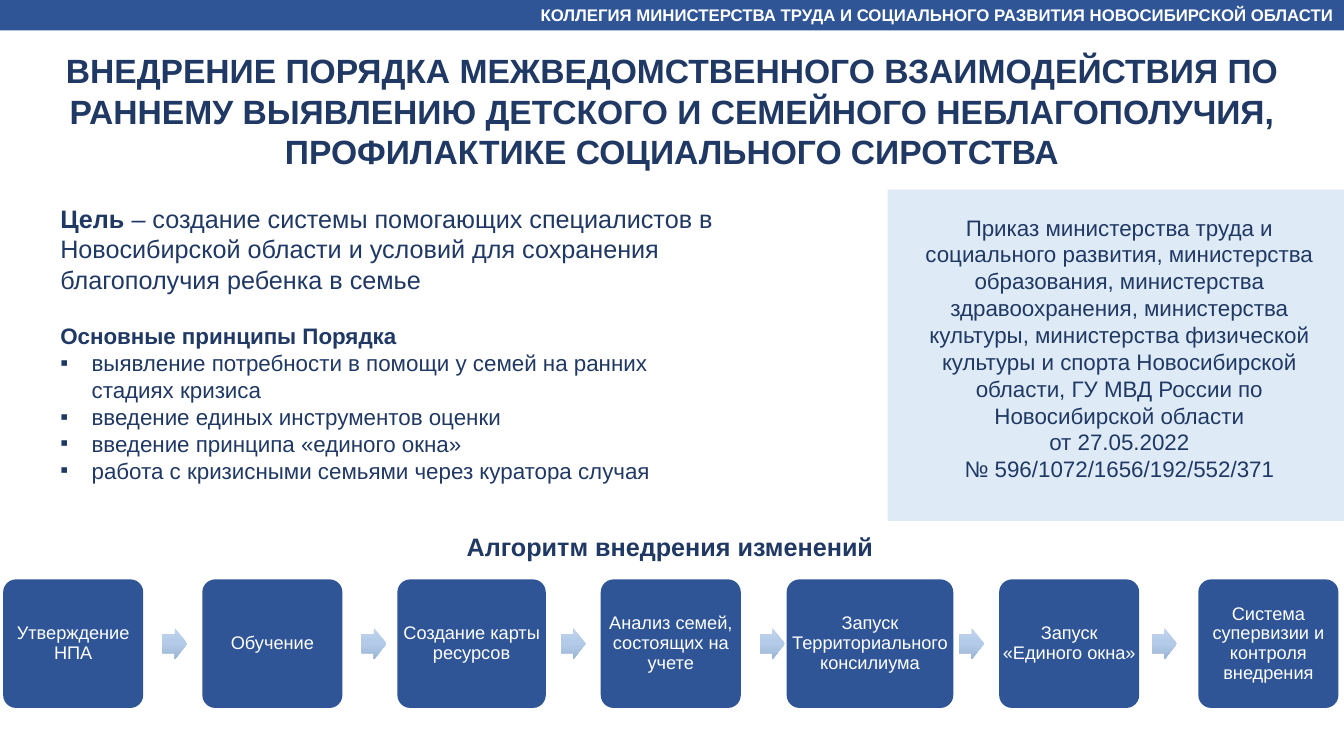
from copy import deepcopy

from lxml.etree import SubElement
from pptx import Presentation
from pptx.dml.color import RGBColor
from pptx.enum.shapes import MSO_SHAPE
from pptx.enum.text import MSO_ANCHOR, MSO_AUTO_SIZE, PP_ALIGN
from pptx.oxml.ns import qn
from pptx.util import Cm, Pt

NAVY = RGBColor(0x20, 0x38, 0x64)
BLUE = RGBColor(0x2F, 0x55, 0x97)
PALE_BLUE = RGBColor(0xDE, 0xEB, 0xF7)
WHITE = RGBColor(0xFF, 0xFF, 0xFF)
ARROW_COLOURS = [
    RGBColor(0xC0, 0xD3, 0xEB),
    RGBColor(0xB3, 0xCB, 0xE9),
    RGBColor(0x9B, 0xB4, 0xD3),
]

HEADER = "КОЛЛЕГИЯ МИНИСТЕРСТВА ТРУДА И СОЦИАЛЬНОГО РАЗВИТИЯ НОВОСИБИРСКОЙ ОБЛАСТИ"
TITLE = (
    "ВНЕДРЕНИЕ ПОРЯДКА МЕЖВЕДОМСТВЕННОГО ВЗАИМОДЕЙСТВИЯ ПО РАННЕМУ ВЫЯВЛЕНИЮ "
    "ДЕТСКОГО И СЕМЕЙНОГО НЕБЛАГОПОЛУЧИЯ, ПРОФИЛАКТИКЕ СОЦИАЛЬНОГО СИРОТСТВА"
)
GOAL_LABEL = "Цель "
GOAL = (
    "– создание системы помогающих специалистов в Новосибирской области и "
    "условий для сохранения благополучия ребенка в семье"
)
PRINCIPLES_HEADING = "Основные принципы Порядка"
PRINCIPLES = [
    "выявление потребности в помощи у семей на ранних стадиях кризиса",
    "введение единых инструментов оценки",
    "введение принципа «единого окна»",
    "работа с кризисными семьями через куратора случая",
]
ORDER = [
    "Приказ министерства труда и социального развития, министерства образования, "
    "министерства здравоохранения, министерства культуры, министерства физической "
    "культуры и спорта Новосибирской области, ГУ МВД России по Новосибирской области",
    "от 27.05.2022",
    "№ 596/1072/1656/192/552/371",
]
ALGORITHM_HEADING = "Алгоритм внедрения изменений"
STEPS = [
    {"text": "Утверждение НПА"},
    {"text": "Обучение"},
    {"text": "Создание карты ресурсов", "width": 3.74},
    {"text": "Анализ семей, состоящих на учете"},
    {"text": "Запуск Территориального консилиума", "width": 4.2},
    {"text": "Запуск «Единого окна»", "arrow_offset": 3.85},
    {"text": "Система супервизии и контроля внедрения"},
]

SLIDE_WIDTH, SLIDE_HEIGHT = 33.87, 19.05
STEP_LEFT, STEP_TOP, STEP_WIDTH, STEP_HEIGHT = 0.08, 14.6, 3.53, 3.24
STEP_PITCH = 5.02
ARROW_OFFSET, ARROW_WIDTH, ARROW_HEIGHT = 4.01, 0.63, 0.79


def place(shape, box):
    """Set the position and size of a shape in centimetres."""
    for name, value in zip(("left", "top", "width", "height"), box):
        setattr(shape, name, Cm(value))


def add_figure(slide, kind, box, fill=None):
    """Add a preset shape without outline or shadow."""
    shape = slide.shapes.add_shape(kind, *map(Cm, box))
    shape.shadow.inherit = False
    shape.line.fill.background()
    if fill is not None:
        shape.fill.solid()
        shape.fill.fore_color.rgb = fill
    return shape


def write(shape, paragraphs, size, colour=NAVY, align=PP_ALIGN.LEFT, line_spacing=1.0, **frame_format):
    """Fill a shape with paragraphs made of (text, bold) runs."""
    frame = shape.text_frame
    frame_values = {
        "word_wrap": True,
        "auto_size": MSO_AUTO_SIZE.NONE,
        "vertical_anchor": MSO_ANCHOR.TOP,
        **frame_format,
    }
    for name, value in frame_values.items():
        setattr(frame, name, value)
    for index, runs in enumerate(paragraphs):
        paragraph = frame.add_paragraph() if index else frame.paragraphs[0]
        paragraph.alignment = align
        paragraph.line_spacing = line_spacing
        for text, bold in runs:
            run = paragraph.add_run()
            run.text = text
            for name, value in {"name": "Arial", "size": Pt(size), "bold": bold}.items():
                setattr(run.font, name, value)
            run.font.color.rgb = colour


def add_bullet(paragraph):
    """Give a paragraph a square bullet with a hanging indent."""
    properties = paragraph._p.get_or_add_pPr()
    properties.set("marL", str(Cm(0.79)))
    properties.set("indent", str(-Cm(0.79)))
    SubElement(properties, qn("a:buFont"), typeface="Arial")
    SubElement(properties, qn("a:buChar"), char="▪")


def shade_arrow(arrow):
    """Fill an arrow with a vertical three-colour gradient."""
    arrow.fill.gradient()
    arrow.fill.gradient_angle = 270
    first_stop = arrow._element.spPr.find(".//" + qn("a:gs"))
    first_stop.addnext(deepcopy(first_stop))
    for index, (stop, colour) in enumerate(zip(arrow.fill.gradient_stops, ARROW_COLOURS)):
        stop.position = index / 2
        stop.color.rgb = colour


def add_steps(slide):
    """Draw the row of steps with arrows between them."""
    for index, step in enumerate(STEPS):
        slot_left = STEP_LEFT + index * STEP_PITCH
        width = step.get("width", STEP_WIDTH)
        left = slot_left + (STEP_WIDTH - width) / 2
        box = add_figure(slide, MSO_SHAPE.ROUNDED_RECTANGLE, (left, STEP_TOP, width, STEP_HEIGHT), BLUE)
        box.adjustments[0] = 0.1
        write(box, [[(step["text"], False)]], 13, WHITE, PP_ALIGN.CENTER, 0.9,
              vertical_anchor=MSO_ANCHOR.MIDDLE, margin_left=0, margin_right=0)
        if index < len(STEPS) - 1:
            arrow_left = slot_left + step.get("arrow_offset", ARROW_OFFSET)
            arrow_top = STEP_TOP + (STEP_HEIGHT - ARROW_HEIGHT) / 2
            arrow = add_figure(slide, MSO_SHAPE.RIGHT_ARROW, (arrow_left, arrow_top, ARROW_WIDTH, ARROW_HEIGHT))
            arrow.adjustments[0] = 0.6
            shade_arrow(arrow)


def add_text(slide, box, paragraphs, size, **text_format):
    """Add a text box with the given paragraphs."""
    write(slide.shapes.add_textbox(*map(Cm, box)), paragraphs, size, **text_format)


def main():
    """Build the slide and save the presentation."""
    presentation = Presentation()
    presentation.slide_width = Cm(SLIDE_WIDTH)
    presentation.slide_height = Cm(SLIDE_HEIGHT)
    slide = presentation.slides.add_slide(presentation.slide_layouts[5])

    title = slide.shapes.title
    place(title, (0, 1.14, SLIDE_WIDTH, 3.33))
    write(title, [[(TITLE, True)]], 24, align=PP_ALIGN.CENTER)

    add_figure(slide, MSO_SHAPE.RECTANGLE, (22.37, 4.78, 11.5, 8.35), PALE_BLUE)
    header = add_figure(slide, MSO_SHAPE.RECTANGLE, (0, 0, SLIDE_WIDTH, 0.77), BLUE)
    write(header, [[(HEADER, True)]], 12, WHITE, PP_ALIGN.RIGHT, vertical_anchor=MSO_ANCHOR.MIDDLE)

    add_text(slide, (1.27, 5, 18.95, 2.57), [[(GOAL_LABEL, True), (GOAL, False)]], 18)

    principles = add_figure(slide, MSO_SHAPE.RECTANGLE, (1.27, 8, 15.9, 4.37), WHITE)
    write(principles, [[(PRINCIPLES_HEADING, True)]] + [[(text, False)] for text in PRINCIPLES], 16)
    for paragraph in principles.text_frame.paragraphs[1:]:
        add_bullet(paragraph)

    add_steps(slide)
    add_text(slide, (11.51, 13.26, 10.87, 1.02), [[(ALGORITHM_HEADING, True)]], 18, word_wrap=False)
    add_text(slide, (22.76, 5.26, 10.9, 7.09), [[(text, False)] for text in ORDER], 16, align=PP_ALIGN.CENTER)
    presentation.save("out.pptx")


if __name__ == "__main__":
    main()
